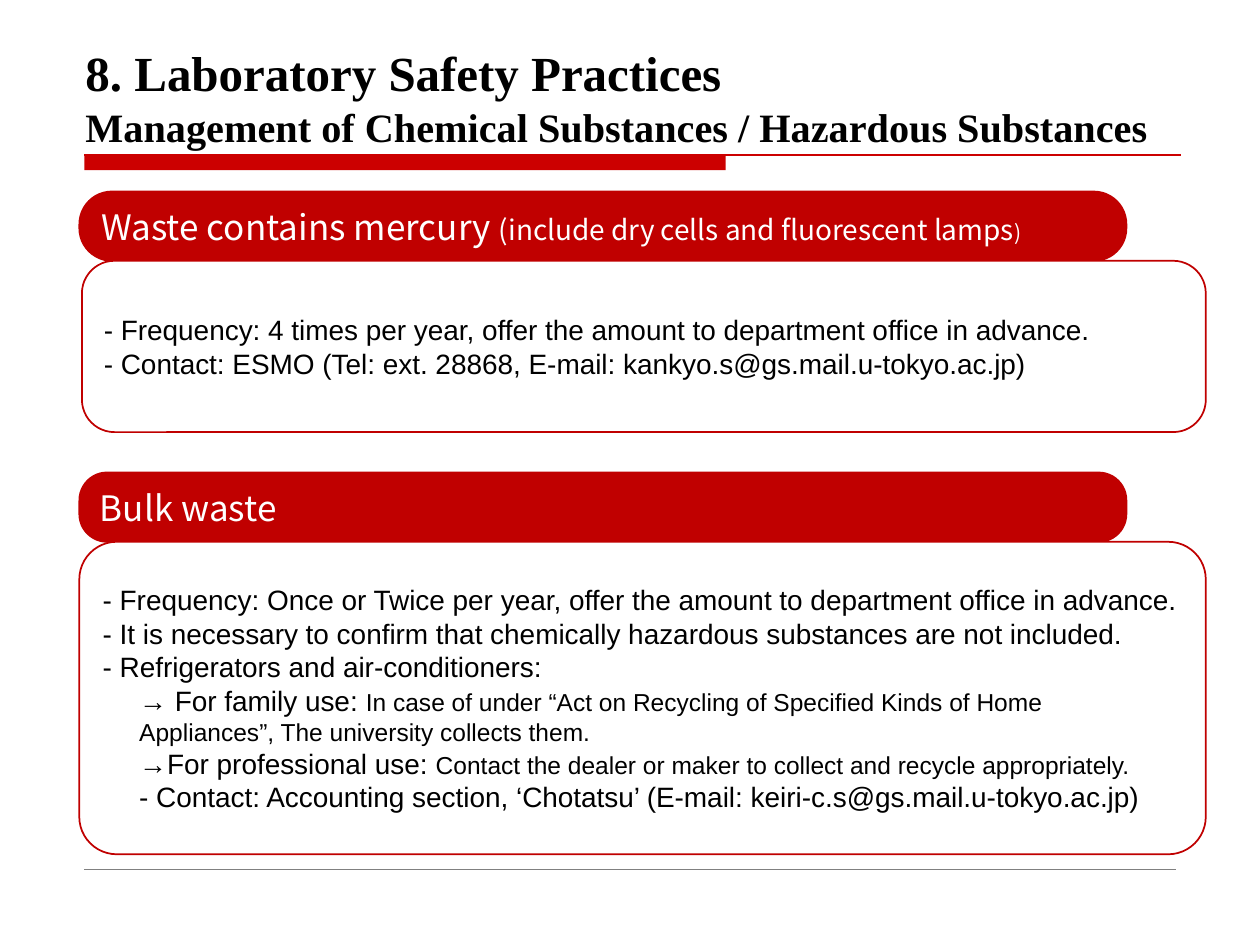
from dataclasses import dataclass

from lxml.etree import SubElement
from pptx import Presentation
from pptx.dml.color import RGBColor
from pptx.enum.shapes import MSO_CONNECTOR, MSO_SHAPE
from pptx.enum.text import MSO_ANCHOR, PP_ALIGN
from pptx.oxml.ns import qn
from pptx.util import Emu, Pt

PX = 9144
RED = "C00000"
RULE_RED = "CC0000"
WHITE = "FFFFFF"
BLACK = "000000"
GREY = "808080"
INDENT = 29


@dataclass(frozen=True)
class Run:
    text: str
    size: int = 16


@dataclass(frozen=True)
class Line:
    runs: tuple[Run, ...]
    indent: int = 0


@dataclass(frozen=True)
class Panel:
    left: int
    top: int
    width: int
    height: int
    corner: float
    fill: str
    font: str
    color: str
    lines: tuple[Line, ...]


def px(length: int) -> Emu:
    return Emu(length * PX)


def rgb(color: str) -> RGBColor:
    return RGBColor.from_string(color)


def write_text(frame, lines, *, font: str, color: str, bold: bool = False,
               anchor=MSO_ANCHOR.MIDDLE, breaks: bool = False) -> None:
    frame.word_wrap = True
    frame.vertical_anchor = anchor
    for index, line in enumerate(lines):
        paragraph = frame.paragraphs[0]
        if index and breaks:
            paragraph.add_line_break()
        elif index:
            paragraph = frame.add_paragraph()
        paragraph.alignment = PP_ALIGN.LEFT
        if line.indent:
            properties = paragraph._p.get_or_add_pPr()
            properties.set("marL", str(px(line.indent)))
            properties.set("indent", "0")
        for part in line.runs:
            run = paragraph.add_run()
            run.text = part.text
            run.font.name = font
            run.font.size = Pt(part.size)
            run.font.bold = bold
            run.font.color.rgb = rgb(color)


def draw_panel(slide, panel: Panel) -> None:
    shape = slide.shapes.add_shape(
        MSO_SHAPE.ROUNDED_RECTANGLE,
        px(panel.left), px(panel.top), px(panel.width), px(panel.height))
    shape.adjustments[0] = panel.corner
    shape.shadow.inherit = False
    shape.fill.solid()
    shape.fill.fore_color.rgb = rgb(panel.fill)
    shape.line.color.rgb = rgb(RED)
    shape.line.width = Pt(1)
    write_text(shape.text_frame, panel.lines, font=panel.font, color=panel.color)


def draw_rule(slide, left: int, right: int, y: int, color: str, width: float) -> None:
    rule = slide.shapes.add_connector(
        MSO_CONNECTOR.STRAIGHT, px(left), px(y), px(right), px(y))
    rule.line.color.rgb = rgb(color)
    rule.line.width = Pt(width)
    SubElement(rule._element.spPr, qn("a:effectLst"))


def draw_title_bar(slide) -> None:
    bar = slide.shapes.add_shape(MSO_SHAPE.RECTANGLE, px(67), px(123), px(509), px(12))
    bar.shadow.inherit = False
    bar.fill.solid()
    bar.fill.fore_color.rgb = rgb(RULE_RED)
    bar.line.fill.background()


def draw_title(slide) -> None:
    title = slide.shapes.add_textbox(px(58), px(42), px(875), px(82))
    lines = (
        Line((Run("8. Laboratory Safety Practices", 28),)),
        Line((Run("Management of Chemical Substances / Hazardous Substances", 23),)),
    )
    write_text(title.text_frame, lines, font="Times New Roman", color=BLACK,
               bold=True, anchor=MSO_ANCHOR.BOTTOM, breaks=True)


def heading(top: int, corner: float, *runs: Run) -> Panel:
    return Panel(63, top, 831, 55, corner, RED, "Noto Sans CJK JP", WHITE, (Line(runs),))


def body(left: int, top: int, width: int, height: int, corner: float, *lines: Line) -> Panel:
    return Panel(left, top, width, height, corner, WHITE, "Arial", BLACK, lines)


PANELS = (
    heading(152, 0.47,
            Run("Waste contains mercury ", 20),
            Run("(include dry cells and fluorescent lamps", 16),
            Run(")", 12)),
    heading(375, 0.4, Run("Bulk waste", 20)),
    body(63, 430, 894, 248, 0.12,
         Line((Run("- Frequency: Once or Twice per year, offer the amount to department office in advance."),)),
         Line((Run("- It is necessary to confirm that chemically hazardous substances are not included."),)),
         Line((Run("- Refrigerators and air-conditioners:"),)),
         Line((Run("→ For family use: "),
               Run("In case of under “Act on Recycling of Specified Kinds of Home Appliances”, "
                   "The university collects them.", 14)), INDENT),
         Line((Run("→For professional use: "),
               Run("Contact the dealer or maker to collect and recycle appropriately.", 14)), INDENT),
         Line((Run("- Contact: Accounting section, ‘Chotatsu’ (E-mail: keiri-c.s@gs.mail.u-tokyo.ac.jp)"),),
              INDENT)),
    body(65, 207, 892, 136, 0.19,
         Line((Run("- Frequency: 4 times per year, offer the amount to department office in advance."),)),
         Line((Run("- Contact: ESMO (Tel: ext. 28868, E-mail: kankyo.s@gs.mail.u-tokyo.ac.jp)"),))),
)


def main() -> None:
    presentation = Presentation()
    presentation.slide_width = px(1000)
    presentation.slide_height = px(750)
    slide = presentation.slides.add_slide(presentation.slide_layouts[6])
    draw_title_bar(slide)
    draw_rule(slide, 67, 937, 123, RULE_RED, 0.75)
    draw_rule(slide, 67, 933, 690, GREY, 0.25)
    for panel in PANELS:
        draw_panel(slide, panel)
    draw_title(slide)
    presentation.save("out.pptx")


if __name__ == "__main__":
    main()
